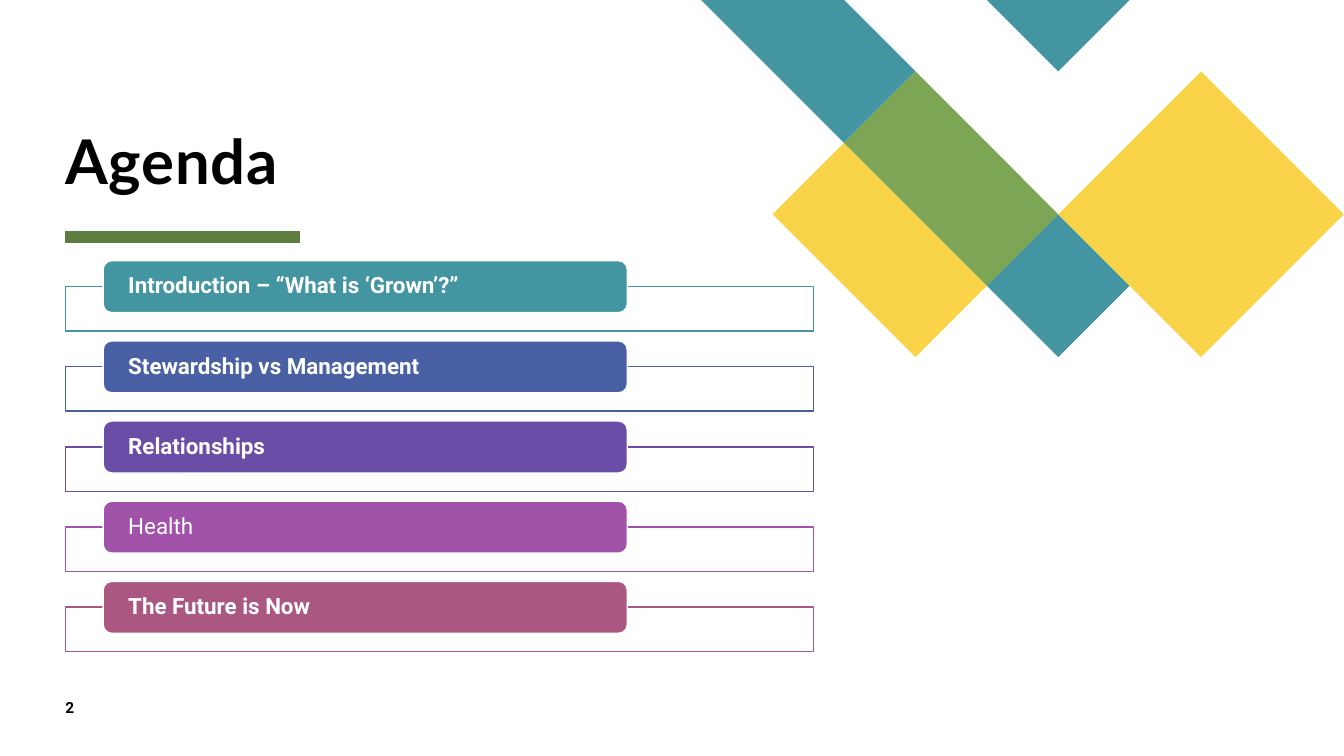
from lxml.etree import SubElement
from pptx import Presentation
from pptx.dml.color import RGBColor
from pptx.enum.shapes import MSO_CONNECTOR, MSO_SHAPE
from pptx.enum.text import MSO_ANCHOR, PP_ALIGN
from pptx.oxml.ns import qn
from pptx.util import Cm, Pt

WHITE = RGBColor(0xFF, 0xFF, 0xFF)
BLACK = RGBColor(0, 0, 0)
TEAL = RGBColor(0x44, 0x95, 0xA2)
YELLOW = RGBColor(0xF9, 0xD4, 0x48)
GREEN = RGBColor(0x7C, 0xA6, 0x55)
DARK_GREEN = RGBColor(0x5D, 0x7D, 0x40)
BLUE = RGBColor(0x49, 0x61, 0xA4)
VIOLET = RGBColor(0x6A, 0x4D, 0xA7)
PURPLE = RGBColor(0xA1, 0x52, 0xA9)
ROSE = RGBColor(0xAA, 0x58, 0x81)

# text, colour, bold
AGENDA = [
    ("Introduction – “What is ‘Grown’?”", TEAL, True),
    ("Stewardship vs Management", BLUE, True),
    ("Relationships", VIOLET, True),
    ("Health", PURPLE, False),
    ("The Future is Now", ROSE, True),
]

# colour, outlines in grid steps from the pattern's top left corner
PATTERN = [
    (TEAL, [[(3, 1), (2, 0), (0, 0), (2, 2)], [(6, 4), (5, 3), (4, 4), (5, 5)]]),
    (YELLOW, [[(2, 2), (1, 3), (3, 5), (4, 4)]]),
    (TEAL, [[(6, 0), (4, 0), (5, 1)]]),
    (GREEN, [[(3, 1), (2, 2), (4, 4), (5, 3)]]),
    (YELLOW, [[(9, 3), (7, 1), (5, 3), (7, 5)]]),
]

SLIDE_W, SLIDE_H = 33.87, 19.05
STEP = 1.8
PATTERN_LEFT = SLIDE_W - 9 * STEP
LEFT, CONTENT_W = 1.65, 18.85
FRAME_TOP, FRAME_H = 7.22, 1.12
LABEL_LEFT, LABEL_W, LABEL_H = 2.6, 13.21, 1.31
LABEL_RISE, PITCH = 0.65, 2.02


def add_pattern_piece(s, color, outlines):
    builder = s.shapes.build_freeform(*outlines[0][0], scale=Cm(STEP))
    for i, (start, *rest) in enumerate(outlines):
        if i:
            builder.move_to(*start)
        builder.add_line_segments(rest, close=True)
    sp = builder.convert_to_shape(Cm(PATTERN_LEFT), 0)
    sp.shadow.inherit = False
    sp.fill.solid()
    sp.fill.fore_color.rgb = color
    sp.line.fill.background()


def add_box(s, kind, left, top, width, height, fill, line):
    sp = s.shapes.add_shape(kind, Cm(left), Cm(top), Cm(width), Cm(height))
    sp.shadow.inherit = False
    sp.fill.solid()
    sp.fill.fore_color.rgb = fill
    sp.line.color.rgb = line
    sp.line.width = Pt(1)
    return sp


def write(sp, text, size, color, font="Roboto", bold=True, anchor=MSO_ANCHOR.TOP,
          inset=0, spacing=1.0):
    tf = sp.text_frame
    tf.word_wrap = True
    tf.vertical_anchor = anchor
    tf.margin_left = tf.margin_right = Cm(inset)
    tf.margin_top = tf.margin_bottom = 0
    p = tf.paragraphs[0]
    p.text = text
    p.alignment = PP_ALIGN.LEFT
    p.line_spacing = spacing
    r = p.runs[0]
    r.font.name, r.font.size, r.font.bold = font, Pt(size), bold
    r.font.color.rgb = color
    return r


def add_agenda_item(s, top, text, color, bold):
    frame = add_box(s, MSO_SHAPE.RECTANGLE, LEFT, top, CONTENT_W, FRAME_H, WHITE, color)
    white = frame.fill._xPr.find(qn("a:solidFill"))[0]
    SubElement(white, qn("a:alpha"), val="90000")
    label = add_box(s, MSO_SHAPE.ROUNDED_RECTANGLE, LABEL_LEFT, top - LABEL_RISE,
                    LABEL_W, LABEL_H, color, WHITE)
    write(label, text, 16, WHITE, bold=bold, anchor=MSO_ANCHOR.MIDDLE,
          inset=0.57, spacing=0.9)


def main():
    prs = Presentation()
    prs.slide_width, prs.slide_height = Cm(SLIDE_W), Cm(SLIDE_H)
    s = prs.slides.add_slide(prs.slide_layouts[6])

    for color, outlines in PATTERN:
        add_pattern_piece(s, color, outlines)

    rule = s.shapes.add_connector(MSO_CONNECTOR.STRAIGHT, Cm(LEFT), Cm(5.97),
                                  Cm(7.57), Cm(5.97))
    rule.line.color.rgb = DARK_GREEN
    rule.line.width = Pt(8)
    SubElement(rule._element.spPr, qn("a:effectLst"))

    title = s.shapes.add_textbox(Cm(LEFT), Cm(0.53), Cm(CONTENT_W), Cm(4.42))
    r = write(title, "Agenda", 44, BLACK, font="Lato", anchor=MSO_ANCHOR.BOTTOM, spacing=0.8)
    r.font._element.set("spc", "50")

    for i, item in enumerate(AGENDA):
        add_agenda_item(s, FRAME_TOP + i * PITCH, *item)

    number = s.shapes.add_textbox(Cm(LEFT), Cm(17.58), Cm(1.45), Cm(0.69))
    write(number, "2", 11, BLACK)

    prs.save("out.pptx")


if __name__ == "__main__":
    main()
